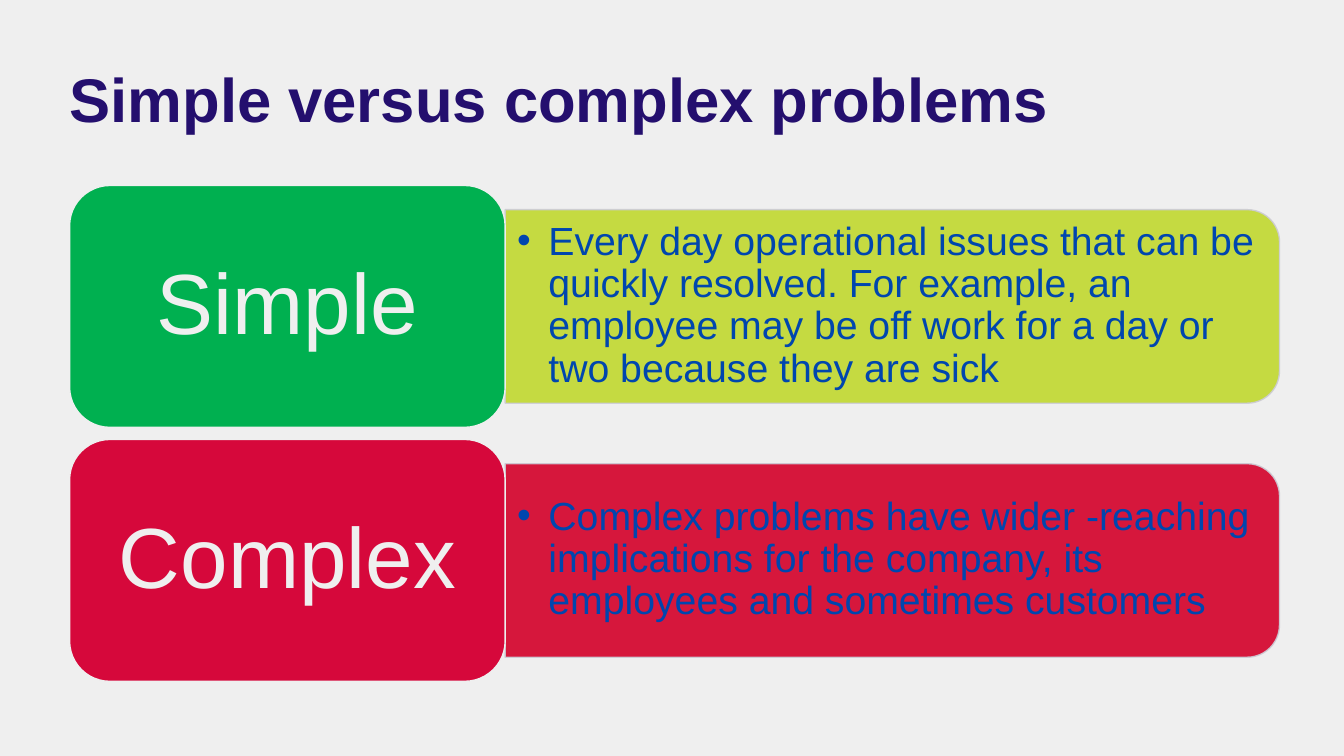
import pptx
import pptx.util
import pptx.dml.color
import pptx.enum.shapes
import pptx.enum.text
import pptx.oxml.ns
import lxml.etree

PX = 9144  # EMU per px, 100 px to the inch
FONT = "Arial"
PALE, NAVY, BLUE, BORDER = "EFEFEF", "240F6E", "0046AE", "CDCCD5"
ALIGN = pptx.enum.text.PP_ALIGN
ANCHOR = pptx.enum.text.MSO_ANCHOR
SHAPE = pptx.enum.shapes.MSO_SHAPE

PROBLEMS = [
    ("Simple", "00B050", "C1D82F",
     "Every day operational issues that can be quickly resolved. For example, "
     "an employee may be off work for a day or two because they are sick"),
    ("Complex", "D6083B", "D40029",
     "Complex problems have wider -reaching implications for the company, "
     "its employees and sometimes customers"),
]


def px(*lengths):
    return [pptx.util.Emu(round(length * PX)) for length in lengths]


def paint(color_format, color):
    color_format.rgb = pptx.dml.color.RGBColor.from_string(color)


def add_xml(parent, tag, **attributes):
    return lxml.etree.SubElement(parent, pptx.oxml.ns.qn(tag), attributes)


def write(frame, text, size, color, insets, anchor, align=ALIGN.LEFT, bold=False):
    frame.word_wrap = True
    frame.auto_size = pptx.enum.text.MSO_AUTO_SIZE.NONE
    frame.vertical_anchor = anchor
    frame.margin_left, frame.margin_top = px(*insets)
    frame.margin_right, frame.margin_bottom = px(*insets)
    frame.text = text
    paragraph = frame.paragraphs[0]
    paragraph.alignment = align
    paragraph.line_spacing = 0.9
    font = paragraph.runs[0].font
    font.name, font.size, font.bold = FONT, pptx.util.Pt(size), bold
    paint(font.color, color)
    return paragraph


def add_block(slide, kind, box, fill, line):
    block = slide.shapes.add_shape(kind, *px(*box))
    block.shadow.inherit = False
    block.fill.solid()
    paint(block.fill.fore_color, fill)
    block.line.width = pptx.util.Pt(1)
    paint(block.line.color, line)
    return block


def add_title(slide, box, text):
    title = slide.shapes.title
    title.left, title.top, title.width, title.height = px(*box)
    write(title.text_frame, text, 44, NAVY, (0, 0), ANCHOR.TOP, bold=True)


def add_description(slide, box, text, fill):
    left, top, width, height = box
    # Bar lies on its side, so its rounded top faces right
    bar = add_block(slide, SHAPE.ROUND_2_SAME_RECTANGLE,
                    (left + (width - height) / 2, top - (width - height) / 2,
                     height, width), fill, BORDER)
    bar.rotation = 90
    for color in bar._element.spPr.iter(pptx.oxml.ns.qn("a:srgbClr")):
        add_xml(color, "a:alpha", val="90000")

    # Bulleted text, kept clear of the rounded corners
    words = slide.shapes.add_textbox(*px(left, top + 9, width - 9, height - 19))
    bullet = write(words.text_frame, text, 28, BLUE, (12, 6), ANCHOR.MIDDLE)
    properties = bullet._p.get_or_add_pPr()
    indent = px(31)[0]
    properties.set("marL", str(indent))
    properties.set("indent", str(-indent))
    add_xml(properties, "a:buFont", typeface=FONT)
    add_xml(properties, "a:buChar", char="•")


def add_problem(slide, box, problem):
    name, label_fill, bar_fill, description = problem
    left, top, width, height = box
    label_width, bar_height = 432, 192
    add_description(slide, (left + label_width, top + (height - bar_height) / 2,
                            width - label_width, bar_height), description, bar_fill)
    label = add_block(slide, SHAPE.ROUNDED_RECTANGLE,
                      (left, top, label_width, height), label_fill, PALE)
    write(label.text_frame, name, 61, PALE, (25, 25), ANCHOR.MIDDLE, ALIGN.CENTER)


def main():
    deck = pptx.Presentation()
    deck.slide_width, deck.slide_height = px(1333, 750)
    slide = deck.slides.add_slide(deck.slide_layouts[5])
    slide.background.fill.solid()
    paint(slide.background.fill.fore_color, PALE)

    add_title(slide, (69, 69, 1237, 128), "Simple versus complex problems")
    row_height, gap = 240, 12
    for row, problem in enumerate(PROBLEMS):
        top = 184 + row * (row_height + gap)
        add_problem(slide, (69, top, 1200, row_height), problem)
    deck.save("out.pptx")


if __name__ == "__main__":
    main()
